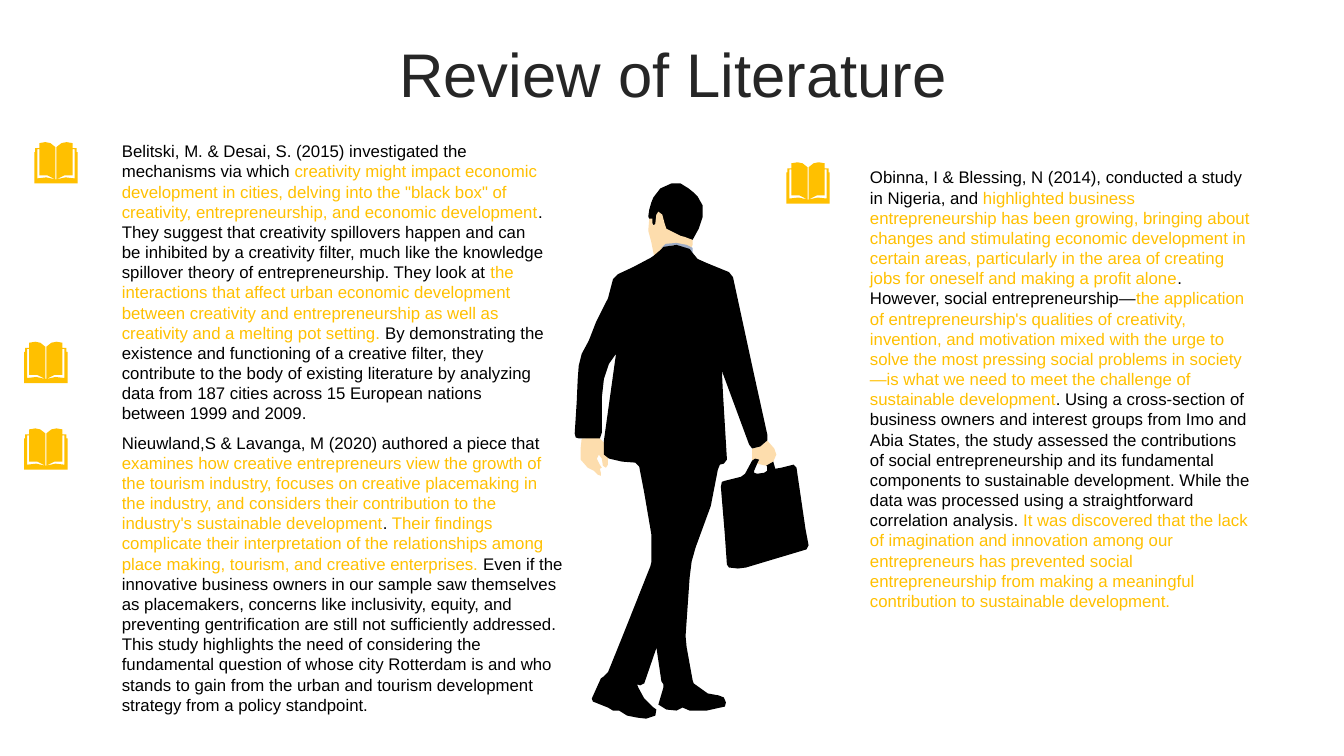
from dataclasses import dataclass

from pptx import Presentation
from pptx.dml.color import RGBColor
from pptx.enum.text import MSO_ANCHOR, MSO_AUTO_SIZE, PP_ALIGN
from pptx.util import Pt

EMU_PER_PX = 9144  # 100 px to the inch


@dataclass(frozen=True)
class Theme:
    font: str = "Arial"
    title_size: int = 44
    body_size: int = 12
    title: str = "262626"
    text: str = "000000"
    accent: str = "FFC000"
    suit: str = "000000"
    skin: str = "FDDDAD"
    collar: str = "9EACC6"


THEME = Theme()

BOOK_POSITIONS = [(34, 141), (24, 339), (24, 425), (780, 161)]
BOOK_WIDTH = 43
RIGHT_PAGE = [
    (22, 37), (31, 35), (40, 36), (40, 7), (38, 7), (38, 33), (30, 33), (22, 37),
    (22, 5), (27, 1), (32, 0), (38, 1), (38, 6), (42, 6), (42, 10), (43, 10), (43, 41),
]

HAIR = [
    (683, 187), (688, 191), (692, 195), (697, 204), (697, 215), (693, 227), (687, 238),
    (678, 237), (675, 236), (665, 231), (660, 228), (658, 222), (656, 215), (654, 212),
    (652, 215), (651, 221), (649, 224), (646, 221), (644, 217), (643, 215), (644, 208),
    (646, 201), (648, 196), (655, 187), (666, 182), (675, 182),
]
NECK = [
    (649, 255), (646, 240), (643, 229), (644, 217), (647, 217), (647, 221), (648, 224),
    (650, 222), (651, 213), (653, 210), (657, 213), (659, 221), (661, 227), (667, 230),
    (675, 234), (679, 235), (687, 238), (687, 243), (685, 247), (675, 243), (664, 242),
    (657, 246),
]
RIGHT_HAND = [
    (751, 460), (753, 456), (749, 455), (746, 457), (746, 445), (754, 443), (761, 437),
    (768, 445), (770, 451), (767, 458), (760, 462),
]
COLLAR = [
    (656, 246), (660, 242), (671, 241), (681, 243), (687, 246), (687, 251), (680, 246),
    (669, 243),
]
LEFT_HAND = [
    (594, 434), (599, 439), (601, 445), (603, 453), (603, 461), (601, 464), (598, 462),
    (597, 455), (594, 451), (592, 455), (595, 461), (597, 464), (595, 465), (596, 469),
    (596, 472), (593, 471), (589, 467), (583, 464), (576, 456), (576, 444), (577, 435),
]
SUIT = [
    (761, 431), (748, 372), (727, 275), (723, 270), (701, 261), (692, 257), (687, 251),
    (684, 247), (671, 243), (658, 245), (654, 249), (648, 254), (645, 256), (628, 265),
    (613, 272), (608, 277), (603, 296), (591, 320), (584, 338), (577, 351), (574, 363),
    (573, 376), (572, 399), (570, 430), (571, 434), (574, 435), (595, 435), (597, 429),
    (597, 394), (599, 376), (604, 361), (611, 351), (599, 437), (599, 445), (599, 451),
    (604, 455), (617, 458), (630, 459), (634, 463), (639, 489), (646, 530), (646, 558),
    (645, 562), (620, 625), (603, 667), (599, 671), (596, 673), (587, 693), (588, 696),
    (603, 702), (608, 705), (614, 705), (622, 710), (632, 712), (641, 713), (650, 710),
    (651, 704), (647, 701), (639, 693), (633, 682), (632, 679), (635, 680), (639, 678),
    (651, 643), (651, 642), (656, 676), (658, 679), (658, 682), (653, 699), (661, 704),
    (671, 705), (677, 702), (684, 705), (701, 705), (719, 701), (720, 697), (718, 692),
    (713, 690), (702, 688), (688, 678), (687, 675), (681, 642), (680, 631), (684, 573),
    (686, 557), (690, 543), (705, 502), (712, 466), (714, 461), (718, 460), (721, 456),
    (717, 389), (716, 368), (743, 441), (746, 445), (754, 443), (761, 437),
]
BRIEFCASE = [
    (802, 541), (799, 525), (790, 464), (787, 461), (775, 464), (769, 465), (767, 458),
    (760, 462), (761, 463), (761, 467), (758, 469), (751, 470), (748, 469), (748, 467),
    (751, 460), (753, 456), (749, 455), (746, 457), (739, 470), (735, 473), (719, 477),
    (716, 478), (715, 483), (719, 531), (721, 560), (723, 563), (732, 564), (740, 563),
    (800, 545),
]

# Runs alternate: plain, highlighted, plain, ...
BELITSKI = [
    "Belitski, M. & Desai, S. (2015) investigated the mechanisms via which ",
    "creativity might impact economic development in cities, delving into the \"black box\" of "
    "creativity, entrepreneurship, and economic development",
    ". They suggest that creativity spillovers happen and can be inhibited by a creativity filter, "
    "much like the knowledge spillover theory of entrepreneurship. They look at ",
    "the interactions that affect urban economic development between creativity and "
    "entrepreneurship as well as creativity and a melting pot setting.",
    " By demonstrating the existence and functioning of a creative filter, they contribute to the "
    "body of existing literature by analyzing data from 187 cities across 15 European nations "
    "between 1999 and 2009.",
]
NIEUWLAND = [
    "Nieuwland,S & Lavanga, M (2020) authored a piece that ",
    "examines how creative entrepreneurs view the growth of the tourism industry, focuses on "
    "creative placemaking in the industry, and considers their contribution to the industry's "
    "sustainable development",
    ".",
    " Their findings complicate their interpretation of the relationships among place making, "
    "tourism, and creative enterprises.",
    " Even if the innovative business owners in our sample saw themselves as placemakers, concerns "
    "like inclusivity, equity, and preventing gentrification are still not sufficiently addressed. "
    "This study highlights the need of considering the fundamental question of whose city Rotterdam "
    "is and who stands to gain from the urban and tourism development strategy from a policy "
    "standpoint.",
]
OBINNA = [
    "Obinna, I & Blessing, N (2014), conducted a study in Nigeria, and ",
    "highlighted business entrepreneurship has been growing, bringing about changes and stimulating "
    "economic development in certain areas, particularly in the area of creating jobs for oneself "
    "and making a profit alone",
    ". However, social entrepreneurship—",
    "the application of entrepreneurship's qualities of creativity, invention, and motivation mixed "
    "with the urge to solve the most pressing social problems in society—is what we need to meet "
    "the challenge of sustainable development",
    ". Using a cross-section of business owners and interest groups from Imo and Abia States, the "
    "study assessed the contributions of social entrepreneurship and its fundamental components to "
    "sustainable development. While the data was processed using a straightforward correlation "
    "analysis. ",
    "It was discovered that the lack of imagination and innovation among our entrepreneurs has "
    "prevented social entrepreneurship from making a meaningful contribution to sustainable "
    "development.",
]


def px(length):
    return length * EMU_PER_PX


def style_run(run, size, color):
    run.font.name = THEME.font
    run.font.size = Pt(size)
    run.font.color.rgb = RGBColor.from_string(color)


def add_text_frame(slide, left, top, width, height):
    box = slide.shapes.add_textbox(px(left), px(top), px(width), px(height))
    box.text_frame.word_wrap = True
    return box.text_frame


def add_title(slide, text):
    frame = add_text_frame(slide, 35, 37, 1266, 79)
    frame.vertical_anchor = MSO_ANCHOR.MIDDLE
    paragraph = frame.paragraphs[0]
    paragraph.text = text
    paragraph.alignment = PP_ALIGN.CENTER
    paragraph.line_spacing = 0.9
    paragraph.space_before = Pt(10)
    style_run(paragraph.runs[0], THEME.title_size, THEME.title)


def add_review(slide, left, top, width, height, passages):
    """Add a paragraph whose every second passage is highlighted."""
    frame = add_text_frame(slide, left, top, width, height)
    frame.auto_size = MSO_AUTO_SIZE.SHAPE_TO_FIT_TEXT
    for index, passage in enumerate(passages):
        run = frame.paragraphs[0].add_run()
        run.text = passage
        style_run(run, THEME.body_size, THEME.accent if index % 2 else THEME.text)


def add_outline(slide, points, color, left=0, top=0):
    builder = slide.shapes.build_freeform(*points[0], scale=EMU_PER_PX)
    builder.add_line_segments(points[1:], close=True)
    shape = builder.convert_to_shape(px(left), px(top))
    shape.shadow.inherit = False
    shape.fill.solid()
    shape.fill.fore_color.rgb = RGBColor.from_string(color)
    shape.line.fill.background()
    return shape


def add_book(slide, left, top):
    left_page = [(BOOK_WIDTH - x, y) for x, y in reversed(RIGHT_PAGE)]
    add_outline(slide, RIGHT_PAGE + left_page, THEME.accent, left, top)


def add_businessman(slide):
    parts = [
        (HAIR, THEME.suit), (NECK, THEME.skin), (RIGHT_HAND, THEME.skin),
        (COLLAR, THEME.collar), (LEFT_HAND, THEME.skin), (SUIT, THEME.suit),
        (BRIEFCASE, THEME.suit),
    ]
    slide.shapes.add_group_shape([add_outline(slide, *part) for part in parts])


def main():
    presentation = Presentation()
    presentation.slide_width, presentation.slide_height = px(1333), px(750)
    slide = presentation.slides.add_slide(presentation.slide_layouts[6])
    add_title(slide, "Review of Literature")
    add_businessman(slide)
    add_review(slide, 111, 135, 441, 293, BELITSKI)
    add_review(slide, 111, 424, 459, 293, NIEUWLAND)
    add_review(slide, 853, 161, 402, 454, OBINNA)
    for left, top in BOOK_POSITIONS:
        add_book(slide, left, top)
    presentation.save("out.pptx")


if __name__ == "__main__":
    main()
